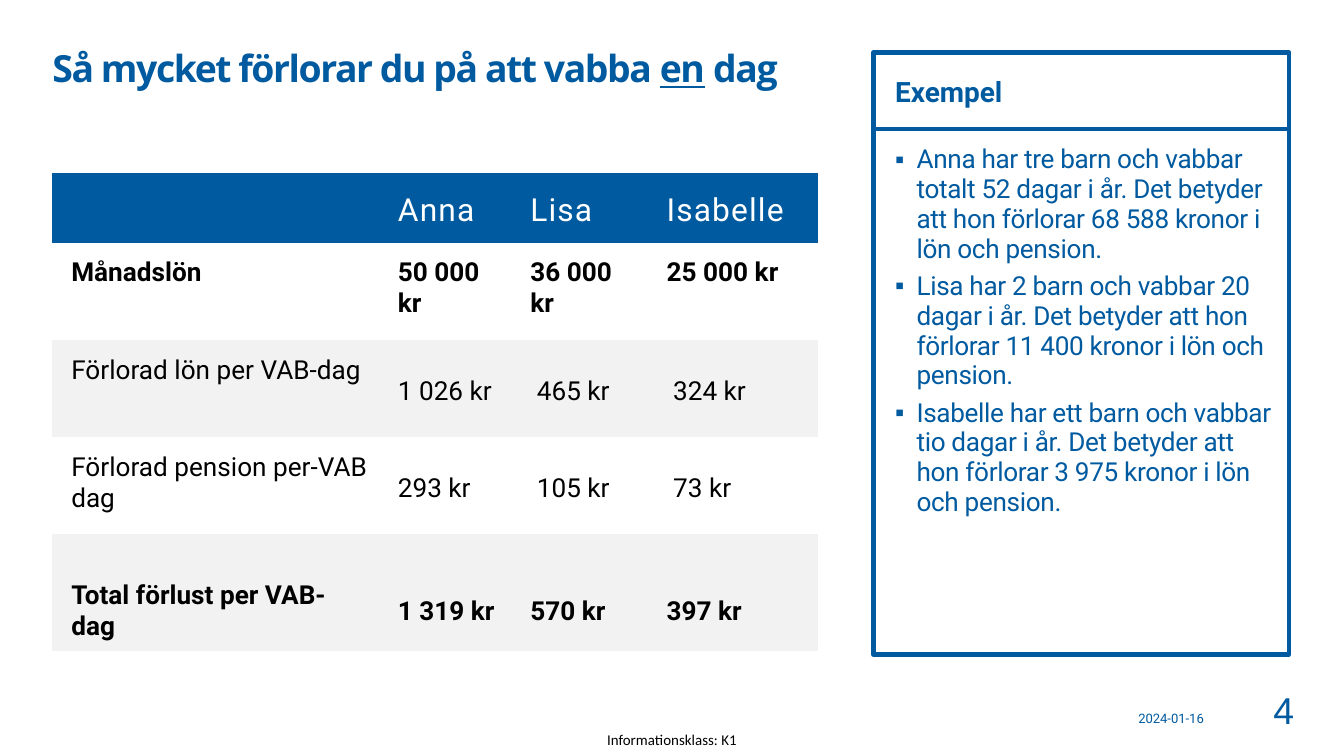
"""Build a slide on the cost of one day at home with a sick child."""
from lxml import etree
from pptx import Presentation
from pptx.dml.color import RGBColor
from pptx.enum.text import MSO_ANCHOR, MSO_AUTO_SIZE, PP_ALIGN
from pptx.oxml.ns import qn
from pptx.util import Pt

HUES = {"blue": "005AA0", "grey": "F2F2F2", "white": "FFFFFF", "black": "000000"}
PLAIN = "{2D5ABB26-0587-4C30-8999-92F81FD0307C}"

TITLE = [("Så mycket förlorar du på att vabba ", False), ("en", True), (" dag", False)]
HEAD = "Exempel"
CASES = [
    "Anna har tre barn och vabbar totalt 52 dagar i år. Det betyder att hon förlorar 68 588 kronor i lön och pension.",
    "Lisa har 2 barn och vabbar 20 dagar i år. Det betyder att hon förlorar 11 400 kronor i lön och pension.",
    "Isabelle har ett barn och vabbar tio dagar i år. Det betyder att hon förlorar 3 975 kronor i lön och pension.",
]
ROWS = [
    ["", "Anna", "Lisa", "Isabelle"],
    ["Månadslön", "50 000 kr", "36 000 kr", "25 000 kr"],
    ["Förlorad lön per VAB-dag", "1 026 kr", " 465 kr", " 324 kr"],
    ["Förlorad pension per-VAB dag", "293 kr", " 105 kr", " 73 kr"],
    ["Total förlust per VAB-dag", "1 319 kr", "570 kr", "397 kr"],
]
COLS = [175, 71, 73, 91.4]
TALL = [37.2, 52.1, 52.1, 52.1, 62.6]
FILLS = ["blue", None, "grey", None, "grey"]
BOLD = [False, True, False, False, True]
LEFT, TOP = 28.1, 28.1
SIDE, WIDE, SPLIT, END = 468, 222.5, 69.1, 350.6
NOTES = [
    ("Informationsklass: K1", (315.4, 387.4, 89.3, 18), 8, "Calibri", "black", PP_ALIGN.CENTER, MSO_ANCHOR.MIDDLE),
    ("2024-01-16", (609.8, 371.5, 36.7, 17.3), 7, "Roboto", "blue", PP_ALIGN.LEFT, MSO_ANCHOR.BOTTOM),
    ("4", (647.3, 370.1, 46.1, 22.3), 20, "Arial", "blue", PP_ALIGN.RIGHT, MSO_ANCHOR.BOTTOM),
]


def tint(name):
    return RGBColor.from_string(HUES[name])


def style(para, size, hue="blue", face="Roboto", bold=False, track=0):
    font = para.font
    font.size, font.name, font.bold = Pt(size), face, bold
    font.color.rgb = tint(hue)
    for run in para.runs:
        run._r.get_or_add_rPr().set("spc", str(round(track * 100)))


def mark(para, char=None, gap=0):
    props = para._p.get_or_add_pPr()
    props.set("marL", str(Pt(gap)))
    props.set("indent", str(Pt(-gap)))
    if char:
        etree.SubElement(props, qn("a:buChar")).set("char", char)
    else:
        etree.SubElement(props, qn("a:buNone"))


def inset(part, sides):
    part.margin_left, part.margin_top, part.margin_right, part.margin_bottom = map(Pt, sides)


def place(shape, spot, sides=(0, 0, 0, 0), anchor=MSO_ANCHOR.TOP):
    shape.left, shape.top, shape.width, shape.height = map(Pt, spot)
    frame = shape.text_frame
    frame.auto_size, frame.word_wrap = MSO_AUTO_SIZE.NONE, True
    frame.vertical_anchor = anchor
    inset(frame, sides)
    return frame


def panel(shape, spot, sides, anchor):
    shape.line.color.rgb, shape.line.width = tint("blue"), Pt(2.5)
    return place(shape, spot, sides, anchor)


def grid(slide):
    table = slide.shapes.add_table(
        len(ROWS), len(COLS), Pt(LEFT), Pt(92.9), Pt(sum(COLS)), Pt(sum(TALL))).table
    table._tbl.tblPr.find(qn("a:tableStyleId")).text = PLAIN
    for col, width in zip(table.columns, COLS):
        col.width = Pt(width)
    for r, row in enumerate(ROWS):
        table.rows[r].height = Pt(TALL[r])
        top = 24.5 if r == len(ROWS) - 1 else 7.9
        for c, words in enumerate(row):
            cell = table.cell(r, c)
            inset(cell, (10.1, top, 5, 5))
            cell.vertical_anchor = MSO_ANCHOR.TOP if r == 1 or c == 0 else MSO_ANCHOR.MIDDLE
            if FILLS[r]:
                cell.fill.solid()
                cell.fill.fore_color.rgb = tint(FILLS[r])
            else:
                cell.fill.background()
            cell.text = words
            para = cell.text_frame.paragraphs[0]
            if r == 0:
                style(para, 17, "white", track=0.6)
            else:
                style(para, 14, "black", bold=BOLD[r])


def main():
    deck = Presentation()
    deck.slide_width, deck.slide_height = Pt(720), Pt(405)
    slide = deck.slides.add_slide(deck.slide_layouts[3])
    title, head, body = slide.placeholders

    para = place(title, (LEFT, TOP, 410.4, 45.4)).paragraphs[0]
    for words, under in TITLE:
        run = para.add_run()
        run.text, run.font.underline = words, under
    para.alignment, para.line_spacing = PP_ALIGN.LEFT, 0.85
    style(para, 20, face="Open Sans", bold=True, track=-0.8)

    frame = panel(head, (SIDE, TOP, WIDE, SPLIT - TOP), (11.5, 2.9, 0, 0), MSO_ANCHOR.MIDDLE)
    frame.text = HEAD
    para = frame.paragraphs[0]
    mark(para)
    para.line_spacing, para.space_before = 0.9, Pt(0)
    style(para, 15, bold=True)

    frame = panel(body, (SIDE, SPLIT, WIDE, END - SPLIT), (11.5, 8.6, 8.6, 0), MSO_ANCHOR.TOP)
    frame.text = "\n".join(CASES)
    for i, para in enumerate(frame.paragraphs):
        mark(para, "▪", 11.5)
        para.line_spacing, para.space_before = 0.95, Pt(4 if i else 0)
        style(para, 14, track=-0.2)

    grid(slide)
    for words, spot, size, face, hue, align, anchor in NOTES:
        frame = place(slide.shapes.add_textbox(0, 0, 0, 0), spot, anchor=anchor)
        frame.text = words
        para = frame.paragraphs[0]
        para.alignment = align
        style(para, size, hue, face)
    deck.save("out.pptx")


if __name__ == "__main__":
    main()
